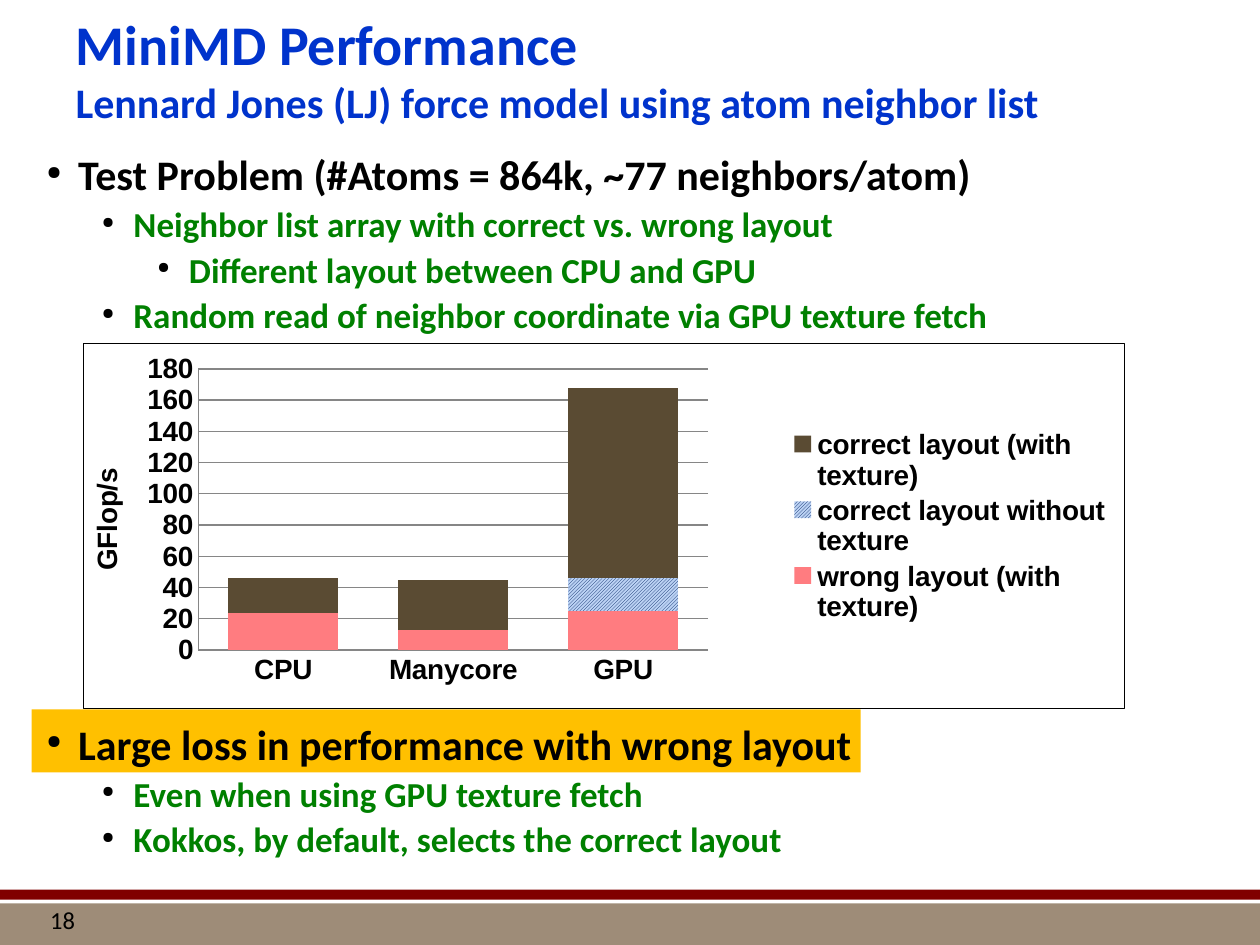
from dataclasses import dataclass

import lxml.etree
import pptx
import pptx.chart.data
import pptx.dml.color
import pptx.enum.chart
import pptx.enum.dml
import pptx.enum.shapes
import pptx.enum.text
import pptx.oxml
import pptx.oxml.ns
import pptx.util

Inches, Pt = pptx.util.Inches, pptx.util.Pt
rgb = pptx.dml.color.RGBColor.from_string
qn = pptx.oxml.ns.qn


@dataclass(frozen=True)
class Theme:
    font: str = "Calibri"
    chart_font: str = "Arial"
    title: str = "0033CC"
    text: str = "000000"
    detail: str = "008000"
    highlight: str = "FFC000"
    footer: str = "9E8C78"
    stripe: str = "800000"
    grid: str = "868686"
    wrong: str = "FF7C80"
    hatch: str = "002060"
    hatch_back: str = "BBD2F4"
    correct: str = "5A4B33"
    title_size: int = 32
    head_size: int = 24
    detail_size: int = 20
    chart_size: int = 16
    number_size: int = 14


def assign(obj, values):
    for name, value in values.items():
        setattr(obj, name, value)


class Deck:
    def __init__(self, theme):
        self.theme = theme
        self.prs = pptx.Presentation()
        assign(self.prs, {"slide_width": Inches(10), "slide_height": Inches(7.5)})
        self.s = self.prs.slides.add_slide(self.prs.slide_layouts[5])

    def style(self, font, size, color, bold=True, name=None):
        assign(font, {"name": name or self.theme.font, "size": Pt(size), "bold": bold})
        font.color.rgb = rgb(color)

    def bar(self, x, y, w, h, color):
        sp = self.s.shapes.add_shape(
            pptx.enum.shapes.MSO_SHAPE.RECTANGLE, *map(Inches, (x, y, w, h)))
        sp.shadow.inherit = False
        sp.fill.solid()
        sp.fill.fore_color.rgb = rgb(color)
        sp.line.fill.background()

    def title(self, x, y, w, h, heading, subtitle):
        t = self.theme
        sp = self.s.shapes.title
        assign(sp, dict(zip(("left", "top", "width", "height"), map(Inches, (x, y, w, h)))))
        assign(sp.text_frame, {
            "word_wrap": True,
            "auto_size": pptx.enum.text.MSO_AUTO_SIZE.NONE,
            "vertical_anchor": pptx.enum.text.MSO_ANCHOR.MIDDLE})
        p = sp.text_frame.paragraphs[0]
        p.alignment = pptx.enum.text.PP_ALIGN.LEFT
        for text, size in ((heading, t.title_size), (subtitle, t.head_size)):
            if p.runs:
                p.add_line_break()
            r = p.add_run()
            r.text = text
            self.style(r.font, size, t.title)

    def text_box(self, x, y, w, h):
        tf = self.s.shapes.add_textbox(*map(Inches, (x, y, w, h))).text_frame
        tf.word_wrap = True
        return tf

    def number(self, x, y, w, h, text):
        p = self.text_box(x, y, w, h).paragraphs[0]
        r = p.add_run()
        r.text = text
        self.style(r.font, self.theme.number_size, self.theme.text, bold=False)

    def bullets(self, x, y, w, h, items):
        t = self.theme
        tf = self.text_box(x, y, w, h)
        assign(tf, dict.fromkeys(
            ("margin_left", "margin_top", "margin_right", "margin_bottom"), 0))
        for i, (level, text) in enumerate(items):
            p = tf.add_paragraph() if i else tf.paragraphs[0]
            p.level = level
            pPr = p._p.get_or_add_pPr()
            pPr.set("marL", str(Inches(0.37 + 0.44 * level)))
            pPr.set("indent", str(Inches(-0.25)))
            color = lxml.etree.SubElement(pPr, qn("a:buClr"))
            lxml.etree.SubElement(color, qn("a:srgbClr"), val=t.text)
            lxml.etree.SubElement(pPr, qn("a:buSzPct"), val="45000")
            lxml.etree.SubElement(pPr, qn("a:buChar"), char="●")
            if i:
                p.space_before = Pt(2)
            r = p.add_run()
            r.text = text
            self.style(r.font, t.detail_size if level else t.head_size,
                       t.detail if level else t.text)

    def chart(self, x, y, w, h, categories, series, axis_title, layout):
        t = self.theme
        data = pptx.chart.data.CategoryChartData()
        data.categories = categories
        for name, values, _ in series:
            data.add_series(name, values)
        chart = self.s.shapes.add_chart(
            pptx.enum.chart.XL_CHART_TYPE.COLUMN_STACKED,
            *map(Inches, (x, y, w, h)), data).chart
        chart.has_title = False
        self.style(chart.font, t.chart_size, t.text, name=t.chart_font)
        plot = chart.plots[0]
        assign(plot, {"gap_width": 55, "overlap": 100, "vary_by_categories": False})
        for ser, (_, _, colors) in zip(plot.series, series):
            fill = ser.format.fill
            if len(colors) == 1:
                fill.solid()
            else:
                fill.patterned()
                fill.pattern = pptx.enum.dml.MSO_PATTERN.LIGHT_UPWARD_DIAGONAL
                fill.back_color.rgb = rgb(colors[1])
            fill.fore_color.rgb = rgb(colors[0])

        value, category = chart.value_axis, chart.category_axis
        assign(value, {"minimum_scale": 0, "maximum_scale": 180, "major_unit": 20,
                       "has_major_gridlines": True})
        for axis in (value, category):
            axis.major_tick_mark = pptx.enum.chart.XL_TICK_MARK.NONE
            self.style(axis.tick_labels.font, t.chart_size, t.text, name=t.chart_font)
        for part in (value, category, value.major_gridlines):
            part.format.line.color.rgb = rgb(t.grid)
            part.format.line.width = Pt(0.75)
        p = value.axis_title.text_frame.paragraphs[0]
        r = p.add_run()
        r.text = axis_title
        self.style(r.font, t.chart_size, t.text, name=t.chart_font)

        chart.has_legend = True
        assign(chart.legend, {"position": pptx.enum.chart.XL_LEGEND_POSITION.RIGHT,
                              "include_in_layout": False})
        self.style(chart.legend.font, t.chart_size, t.text, name=t.chart_font)
        self.frame_chart(chart, layout)

    def frame_chart(self, chart, layout):
        root = chart._chartSpace
        area = root.find(".//" + qn("c:plotArea"))
        for old in area.findall(qn("c:layout")):
            area.remove(old)
        node = lxml.etree.Element(qn("c:layout"))
        manual = lxml.etree.SubElement(node, qn("c:manualLayout"))
        settings = [("layoutTarget", "inner"), ("xMode", "edge"), ("yMode", "edge")]
        for tag, val in settings + list(zip("xywh", layout)):
            lxml.etree.SubElement(manual, qn("c:" + tag), val=str(val))
        area.insert(0, node)
        border = pptx.oxml.parse_xml(
            f'<c:spPr {pptx.oxml.ns.nsdecls("c", "a")}><a:noFill/>'
            f'<a:ln w="{Pt(0.75)}"><a:solidFill><a:srgbClr val="{self.theme.text}"/>'
            '</a:solidFill></a:ln></c:spPr>')
        root.find(qn("c:chart")).addnext(border)


def main():
    t = Theme()
    deck = Deck(t)
    deck.bar(0, 7.17, 10, 0.33, t.footer)
    deck.bar(0, 7.06, 10, 0.08, t.stripe)
    deck.bar(0.25, 5.63, 6.58, 0.5, t.highlight)
    deck.title(0.5, 0, 9, 1.08, "MiniMD Performance",
               "Lennard Jones (LJ) force model using atom neighbor list")
    deck.number(0.3, 7.13, 2.04, 0.36, "18")
    deck.bullets(0.25, 1.18, 9.5, 1.5, [
        (0, "Test Problem (#Atoms = 864k, ~77 neighbors/atom)"),
        (1, "Neighbor list array with correct vs. wrong layout"),
        (2, "Different layout between CPU and GPU"),
        (1, "Random read of neighbor coordinate via GPU texture fetch")])
    deck.bullets(0.25, 5.7, 9.5, 1.26, [
        (0, "Large loss in performance with wrong layout"),
        (1, "Even when using GPU texture fetch"),
        (1, "Kokkos, by default, selects the correct layout")])
    deck.chart(0.66, 2.72, 8.27, 2.91, ["CPU", "Manycore", "GPU"], [
        ("wrong layout (with texture)", (24, 13, 25), (t.wrong,)),
        ("correct layout without texture", (None, None, 21), (t.hatch, t.hatch_back)),
        ("correct layout (with texture)", (22, 32, 122), (t.correct,))],
        "GFlop/s", (0.11, 0.07, 0.49, 0.77))
    deck.prs.save("out.pptx")


if __name__ == "__main__":
    main()
